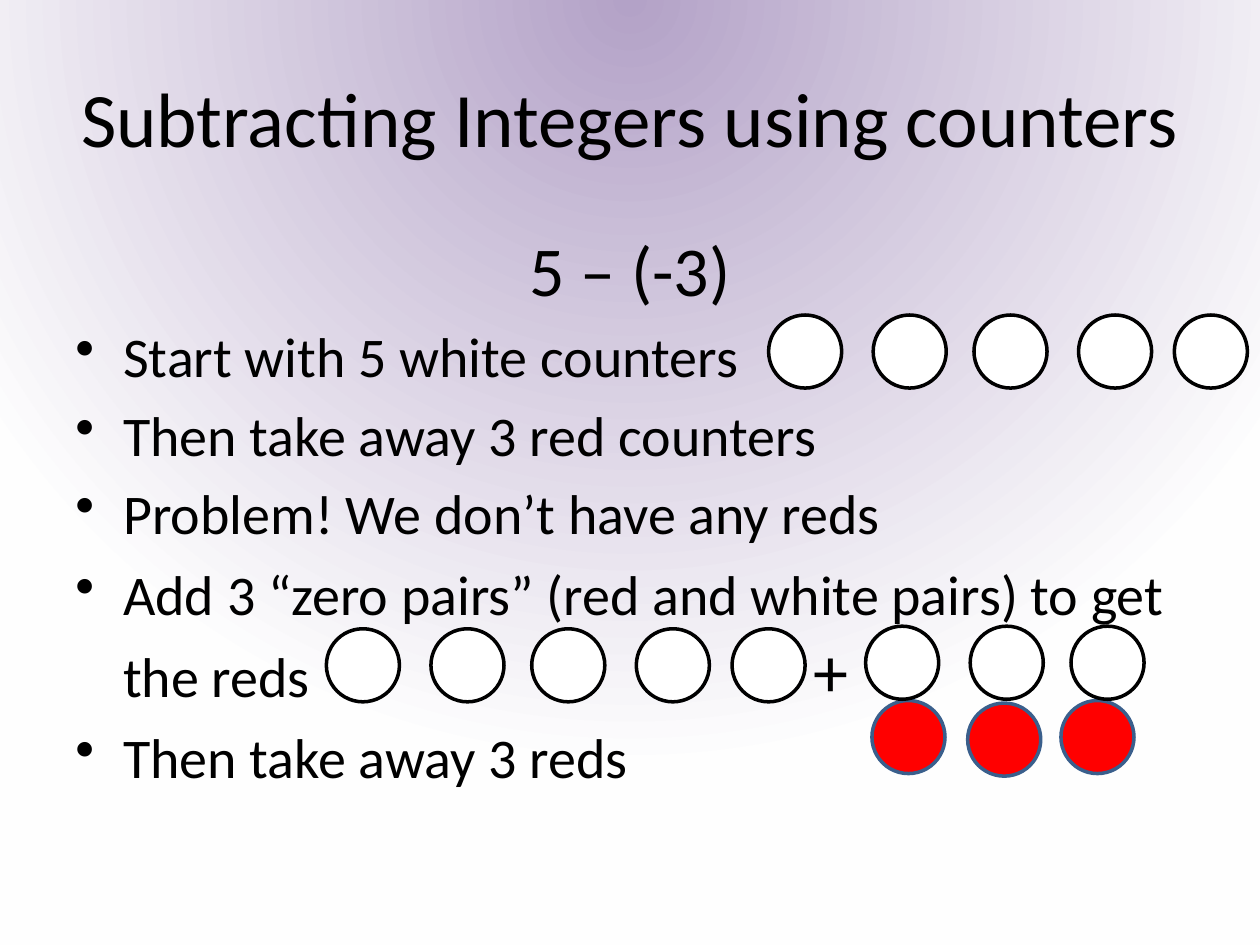
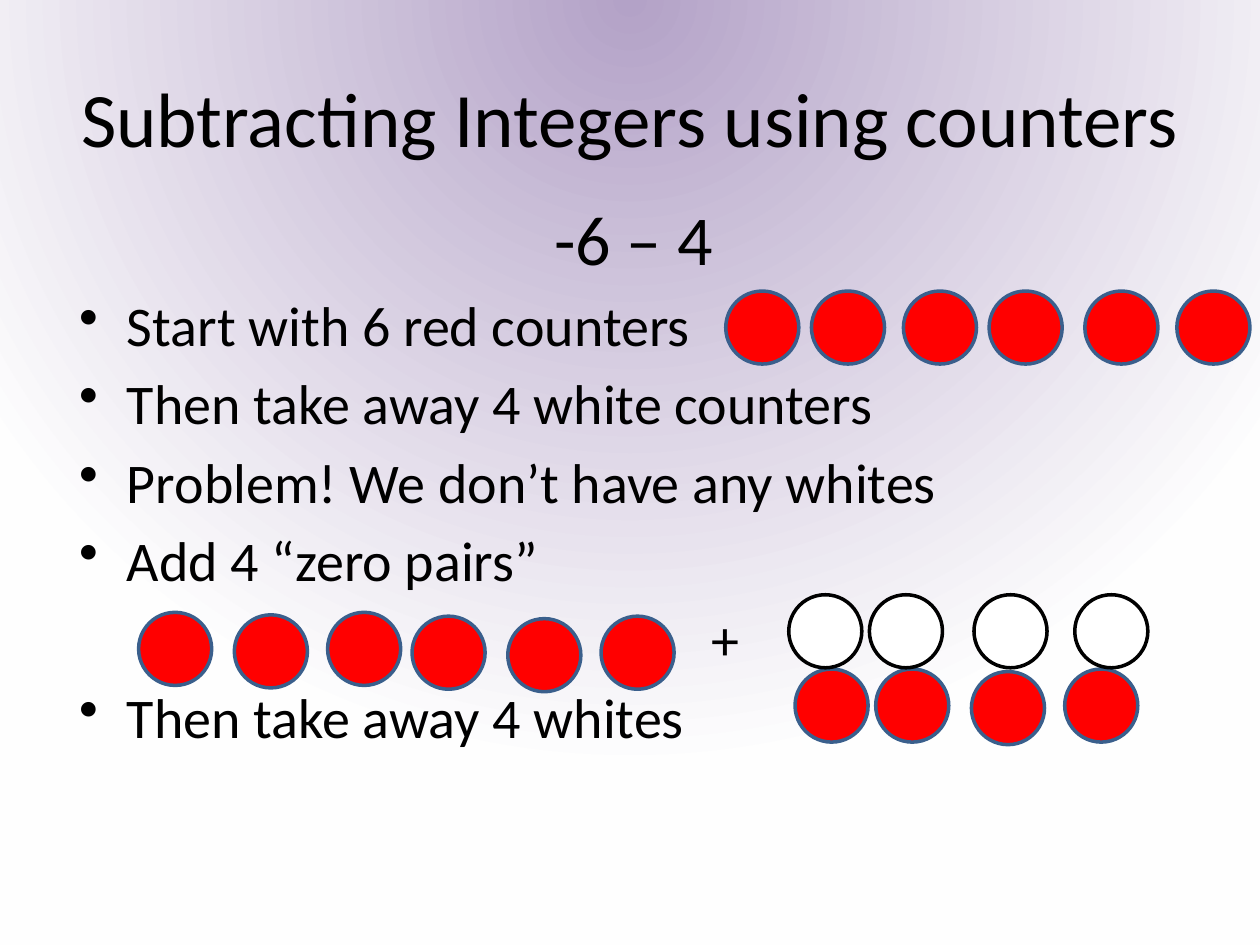
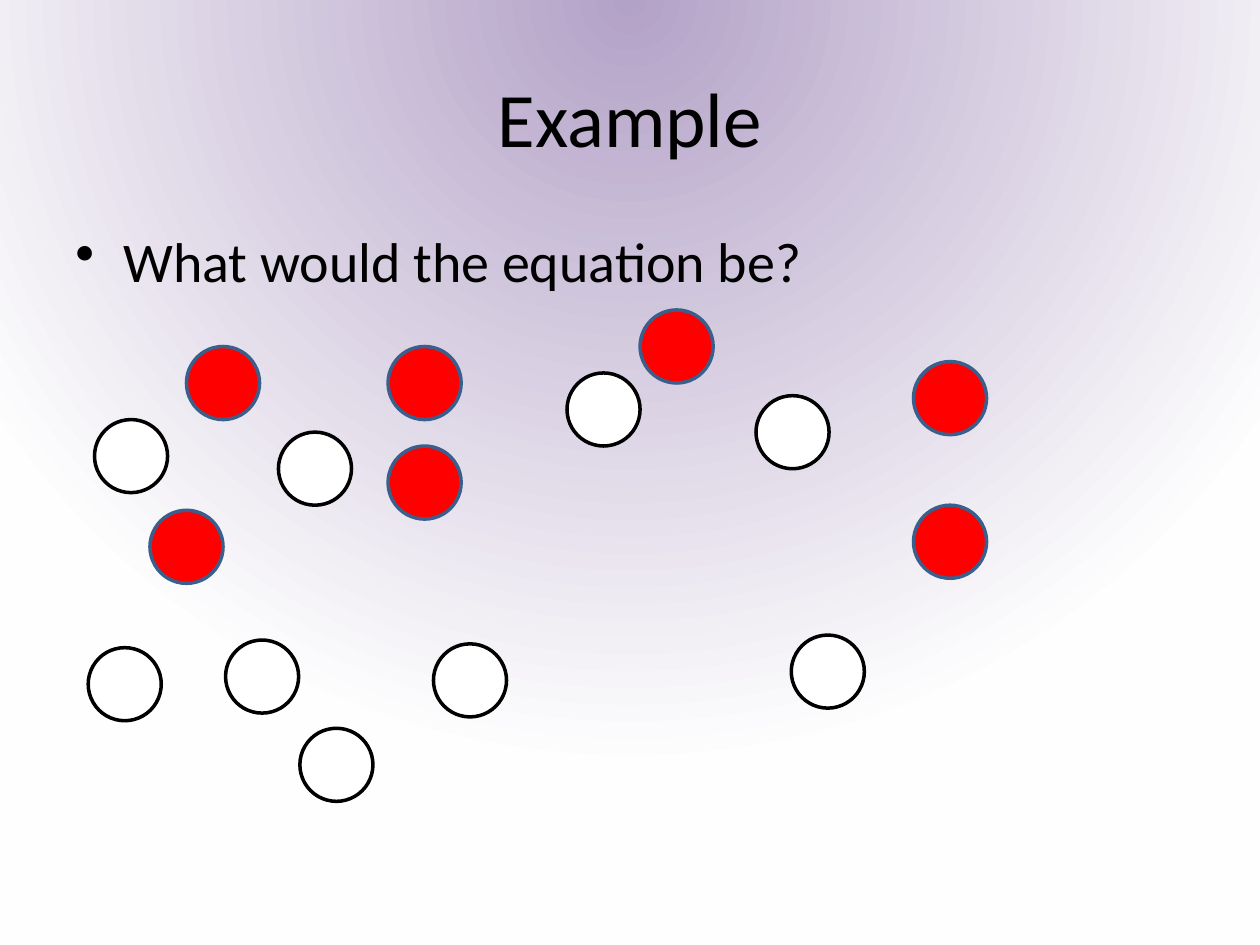
from lxml.etree import SubElement
from pptx import Presentation
from pptx.dml.color import RGBColor
from pptx.enum.shapes import MSO_SHAPE as Shape
from pptx.enum.text import MSO_ANCHOR as Anchor, PP_ALIGN as Align
from pptx.oxml.ns import qn
from pptx.util import Pt

PX = 9144
COLORS = {
    "glow": "B3A2C7",
    "paper": "FEFEFE",
    "text": "000000",
    "red": "FF0000",
    "red_line": "3A5F8C",
    "white": "FFFFFF",
    "white_line": "000000",
}
FONT = "Calibri"
COUNTER = 58
INDENT = 38
TITLE_SIZE, EXPRESSION_SIZE, BODY_SIZE = 44, 40, 32
WHITE_FIVE = [(0, 0), (83, 0), (163, 0), (246, 0), (322, 0)]
WHITE_THREE = WHITE_FIVE[:3]
RED_THREE = [(0, 0), (76, 2), (150, 0)]


def color(name):
    return RGBColor.from_string(COLORS[name])


class Deck:
    def __init__(self, width, height):
        self.presentation = Presentation()
        self.presentation.slide_width = width * PX
        self.presentation.slide_height = height * PX
        self.slide = None
        self.paint_background()

    def paint_background(self):
        master = self.presentation.slide_master
        fill = master.background.fill
        fill.gradient()
        for stop, (name, position) in zip(fill.gradient_stops, [("glow", 0), ("paper", 0.98)]):
            stop.color.rgb = color(name)
            stop.position = position
        gradient = next(master.element.iter(qn("a:gradFill")))
        gradient.remove(gradient.find(qn("a:lin")))
        circle = SubElement(gradient, qn("a:path"), path="circle")
        SubElement(circle, qn("a:fillToRect"), l="50000", t="-80000", r="50000", b="180000")

    def add_slide(self, title):
        self.slide = self.presentation.slides.add_slide(self.presentation.slide_layouts[6])
        frame = self.text_frame(50, 30, 900, 125)
        frame.vertical_anchor = Anchor.MIDDLE
        paragraph = frame.paragraphs[0]
        self.set_text(paragraph, title, TITLE_SIZE)
        paragraph.alignment = Align.CENTER

    def text_frame(self, left, top, width, height):
        box = self.slide.shapes.add_textbox(left * PX, top * PX, width * PX, height * PX)
        box.text_frame.word_wrap = True
        return box.text_frame

    def set_text(self, paragraph, text, size):
        paragraph.text = text
        paragraph.font.name = FONT
        paragraph.font.size = Pt(size)
        paragraph.font.color.rgb = color("text")

    def next_paragraph(self, frame, text, size):
        paragraph = frame.add_paragraph() if frame.text else frame.paragraphs[0]
        self.set_text(paragraph, text, size)
        properties = paragraph._p.get_or_add_pPr()
        spacing = SubElement(properties, qn("a:spcBef"))
        SubElement(spacing, qn("a:spcPct"), val="20000")
        properties.insert(0, spacing)
        return paragraph

    def expression(self, frame, text):
        self.next_paragraph(frame, text, EXPRESSION_SIZE).alignment = Align.CENTER

    def bullet(self, frame, text, tab=None):
        paragraph = self.next_paragraph(frame, text, BODY_SIZE)
        properties = paragraph._p.pPr
        properties.set("marL", str(INDENT * PX))
        properties.set("indent", str(-INDENT * PX))
        mark = SubElement(properties, qn("a:buChar"), char="•")
        properties.insert(1, mark)
        if tab:
            stops = SubElement(properties, qn("a:tabLst"))
            SubElement(stops, qn("a:tab"), pos=str(tab * PX), algn="l")
            properties.insert(2, stops)
        return paragraph

    def indented(self, frame, text, left):
        paragraph = self.next_paragraph(frame, text, BODY_SIZE)
        paragraph._p.pPr.set("marL", str(left * PX))

    def group(self):
        return self.slide.shapes.add_group_shape().shapes

    def counters(self, shapes, kind, places, left=0, top=0):
        for x, y in places:
            counter = shapes.add_shape(
                Shape.OVAL, (left + x) * PX, (top + y) * PX, COUNTER * PX, COUNTER * PX
            )
            counter.shadow.inherit = False
            counter.fill.solid()
            counter.fill.fore_color.rgb = color(kind)
            counter.line.color.rgb = color(f"{kind}_line")
            counter.line.width = Pt(2)

    def zero_pairs(self, shapes, left, top):
        self.counters(shapes, "red", RED_THREE, left + 5, top + 59)
        self.counters(shapes, "white", WHITE_THREE, left, top)


def subtract_negative(deck):
    deck.add_slide("Subtracting Integers using counters")
    frame = deck.text_frame(50, 175, 900, 495)
    deck.expression(frame, "5 – (-3)")
    for text in (
        "Start with 5 white counters",
        "Then take away 3 red counters",
        "Problem! We don’t have any reds",
    ):
        deck.bullet(frame, text)
    pairs = deck.bullet(
        frame, "Add 3 “zero pairs” (red and white pairs) to get the reds\t", tab=586
    )
    plus = pairs.add_run()
    plus.text = "+"
    plus.font.size = Pt(EXPRESSION_SIZE)
    deck.bullet(frame, "Then take away 3 reds")

    deck.counters(deck.group(), "white", WHITE_FIVE, 610, 250)
    result = deck.group()
    deck.zero_pairs(result, 687, 497)
    deck.counters(result, "white", WHITE_FIVE, 259, 499)


def subtract_positive(deck):
    deck.add_slide("Subtracting Integers using counters")
    frame = deck.text_frame(53, 150, 900, 495)
    deck.expression(frame, "-6 – 4")
    for text in (
        "Start with 6 red counters",
        "Then take away 4 white counters",
        "Problem! We don’t have any whites",
        "Add 4 “zero pairs”",
    ):
        deck.bullet(frame, text)
    deck.indented(frame, "+", 502)
    deck.bullet(frame, "Then take away 4 whites")

    start = [(x, 231) for x in (576, 644, 717, 785, 861, 934)]
    deck.counters(deck.group(), "red", start)
    result = deck.group()
    deck.zero_pairs(result, 690, 472)
    for left, top in ((327, 489), (110, 486)):
        deck.counters(result, "red", RED_THREE, left, top)
    deck.counters(result, "red", [(631, 531)])
    deck.counters(result, "white", [(626, 472)])


def example(deck):
    deck.add_slide("Example")
    deck.bullet(deck.text_frame(50, 175, 900, 495), "What would the equation be?")
    reds = [(148, 275), (725, 401), (725, 287), (119, 405), (308, 354), (508, 246), (308, 275)]
    whites = [
        (628, 504), (600, 314), (70, 514), (344, 511), (450, 296),
        (75, 333), (238, 578), (221, 343), (179, 508),
    ]
    deck.counters(deck.slide.shapes, "red", reds)
    deck.counters(deck.slide.shapes, "white", whites)


def main():
    deck = Deck(1000, 750)
    subtract_negative(deck)
    subtract_positive(deck)
    example(deck)
    deck.presentation.save("out.pptx")


if __name__ == "__main__":
    main()
